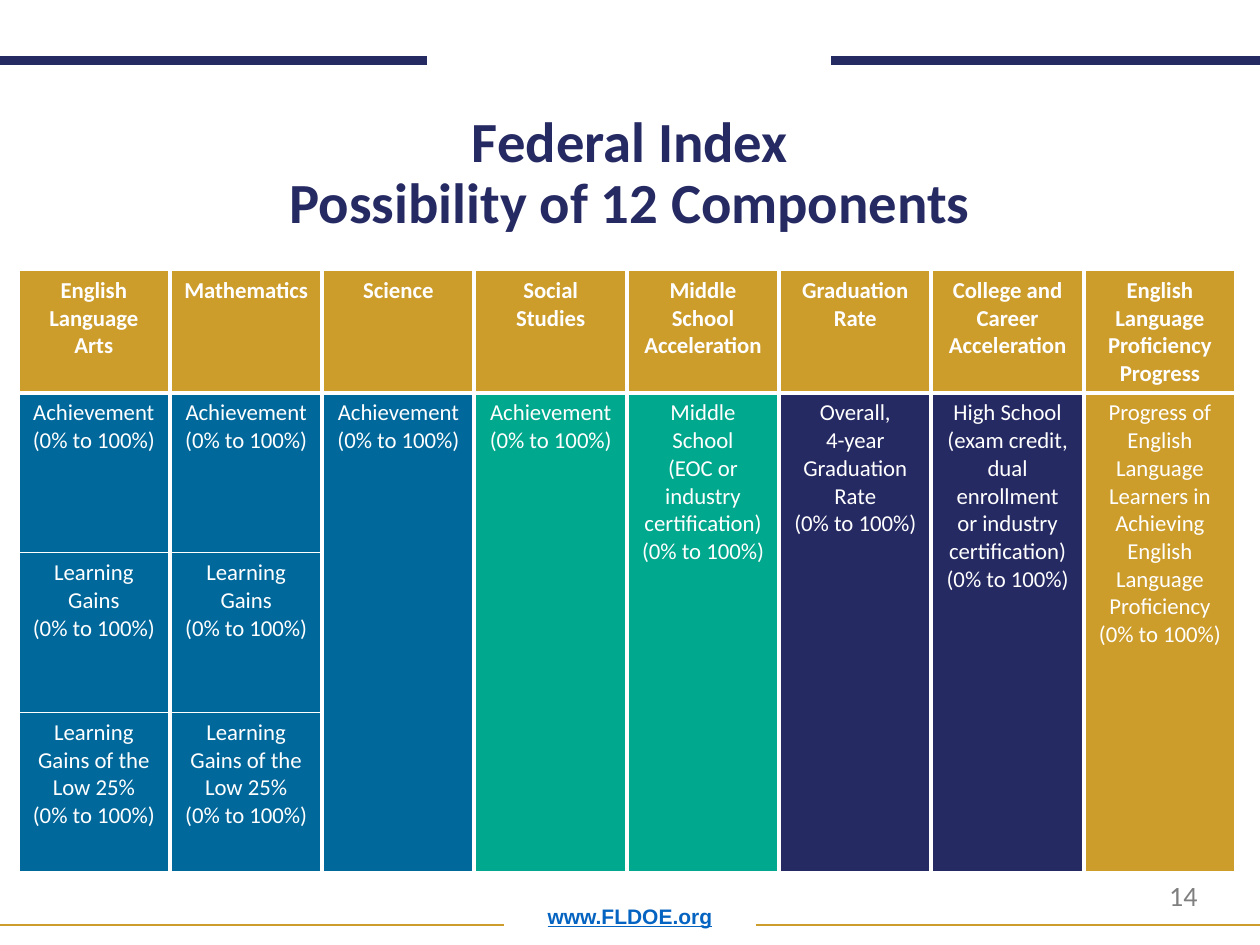
import pptx
import pptx.dml.color
import pptx.enum.shapes
import pptx.enum.text
import pptx.oxml
import pptx.oxml.ns
import pptx.util
from pptx.util import Cm

NAVY = pptx.dml.color.RGBColor(0x26, 0x2A, 0x63)
GOLD = pptx.dml.color.RGBColor(0xCD, 0x9D, 0x2C)
BLUE = pptx.dml.color.RGBColor(0x00, 0x68, 0x9B)
GREEN = pptx.dml.color.RGBColor(0x00, 0xA8, 0x8D)
WHITE = pptx.dml.color.RGBColor(0xFF, 0xFF, 0xFF)
GRAY = pptx.dml.color.RGBColor(0x7F, 0x7F, 0x7F)
LINK_BLUE = pptx.dml.color.RGBColor(0x05, 0x63, 0xC1)

CENTER = pptx.enum.text.PP_ALIGN.CENTER
BOTTOM = pptx.enum.text.MSO_ANCHOR.BOTTOM


def format_paragraph(paragraph, size, color, bold=False, font_name="Calibri"):
    paragraph.font.size = pptx.util.Pt(size)
    paragraph.font.name = font_name
    paragraph.font.bold = bold
    paragraph.font.color.rgb = color


def fill_cell(cell, text, color, bold, bottom_width):
    cell.text = text
    cell.fill.solid()
    cell.fill.fore_color.rgb = color
    for paragraph in cell.text_frame.paragraphs:
        paragraph.alignment = CENTER
        format_paragraph(paragraph, 13, WHITE, bold)
    properties = cell._tc.get_or_add_tcPr()
    widths = {"lnL": 1, "lnR": 1, "lnT": 1, "lnB": bottom_width}
    for position, (side, width) in enumerate(widths.items()):
        border = pptx.oxml.parse_xml(
            f'<a:{side} {pptx.oxml.ns.nsdecls("a")} w="{pptx.util.Pt(width)}">'
            f'<a:solidFill><a:srgbClr val="{WHITE}"/></a:solidFill></a:{side}>'
        )
        properties.insert(position, border)


presentation = pptx.Presentation()
presentation.slide_width = Cm(25.4)
presentation.slide_height = Cm(19.05)
slide = presentation.slides.add_slide(presentation.slide_layouts[5])

rules = [
    (0, 8.61, 1.22, NAVY, 5),
    (16.76, 25.4, 1.22, NAVY, 5),
    (0, 10.16, 18.64, GOLD, 1),
    (15.24, 25.4, 18.64, GOLD, 1),
]
for start, end, height, color, width in rules:
    rule = slide.shapes.add_connector(
        pptx.enum.shapes.MSO_CONNECTOR.STRAIGHT,
        Cm(start), Cm(height), Cm(end), Cm(height),
    )
    rule.line.color.rgb = color
    rule.line.width = pptx.util.Pt(width)
    rule._element.spPr.append(
        pptx.oxml.parse_xml(f'<a:effectLst {pptx.oxml.ns.nsdecls("a")}/>')
    )

title = slide.shapes.title
title.left, title.top, title.width, title.height = Cm(1.75), Cm(2.31), Cm(21.9), Cm(2.57)
title.text_frame.text = "Federal Index\vPossibility of 12 Components"
title.text_frame.auto_size = pptx.enum.text.MSO_AUTO_SIZE.NONE
title.text_frame.vertical_anchor = BOTTOM
paragraph = title.text_frame.paragraphs[0]
paragraph.alignment = CENTER
paragraph.line_spacing = 0.9
format_paragraph(paragraph, 32.4, NAVY, True)

website = slide.shapes.add_textbox(Cm(1.75), Cm(17.78), Cm(21.9), Cm(1.07))
website.text_frame.word_wrap = True
website.text_frame.vertical_anchor = BOTTOM
paragraph = website.text_frame.paragraphs[0]
paragraph.text = "www.FLDOE.org"
paragraph.alignment = CENTER
paragraph.line_spacing = 0.9
format_paragraph(paragraph, 12, LINK_BLUE, True, "Arial")
paragraph.font.underline = True

page_number = slide.shapes.add_textbox(Cm(23.32), Cm(17.58), Cm(1.98), Cm(0.94))
page_number.text_frame.word_wrap = True
paragraph = page_number.text_frame.paragraphs[0]
paragraph.text = "14"
format_paragraph(paragraph, 16, GRAY)

ACHIEVEMENT = "Achievement\n(0% to 100%)"
ACHIEVEMENT_AND_GAINS = [
    ACHIEVEMENT,
    "Learning Gains\n(0% to 100%)",
    "Learning Gains of the\nLow 25%\n(0% to 100%)",
]
components = [
    ("English\nLanguage Arts", BLUE, ACHIEVEMENT_AND_GAINS),
    ("Mathematics", BLUE, ACHIEVEMENT_AND_GAINS),
    ("Science", BLUE, [ACHIEVEMENT]),
    ("Social Studies", GREEN, [ACHIEVEMENT]),
    ("Middle School Acceleration", GREEN,
     ["Middle School\n(EOC or industry certification)\n(0% to 100%)"]),
    ("Graduation Rate", NAVY,
     ["Overall,\n4-year Graduation Rate\n(0% to 100%)"]),
    ("College and Career Acceleration", NAVY,
     ["High School\n(exam credit, dual enrollment or industry certification)\n(0% to 100%)"]),
    ("English Language Proficiency Progress", GOLD,
     ["Progress of English Language Learners in Achieving English Language "
      "Proficiency (0% to 100%)"]),
]
LEFT, TOP, PITCH, WIDTH = 0.38, 5.45, 3.07, 3.02
HEADER_HEIGHT, BODY_HEIGHT = 2.47, 9.66

for column, (heading, color, measures) in enumerate(components):
    table = slide.shapes.add_table(
        len(measures) + 1, 1,
        Cm(LEFT + column * PITCH), Cm(TOP), Cm(WIDTH), Cm(HEADER_HEIGHT + BODY_HEIGHT),
    ).table
    table.rows[0].height = Cm(HEADER_HEIGHT)
    fill_cell(table.cell(0, 0), heading, GOLD, True, 3)
    for row, measure in enumerate(measures, start=1):
        table.rows[row].height = Cm(BODY_HEIGHT / len(measures))
        fill_cell(table.cell(row, 0), measure, color, False, 1)

presentation.save("out.pptx")
